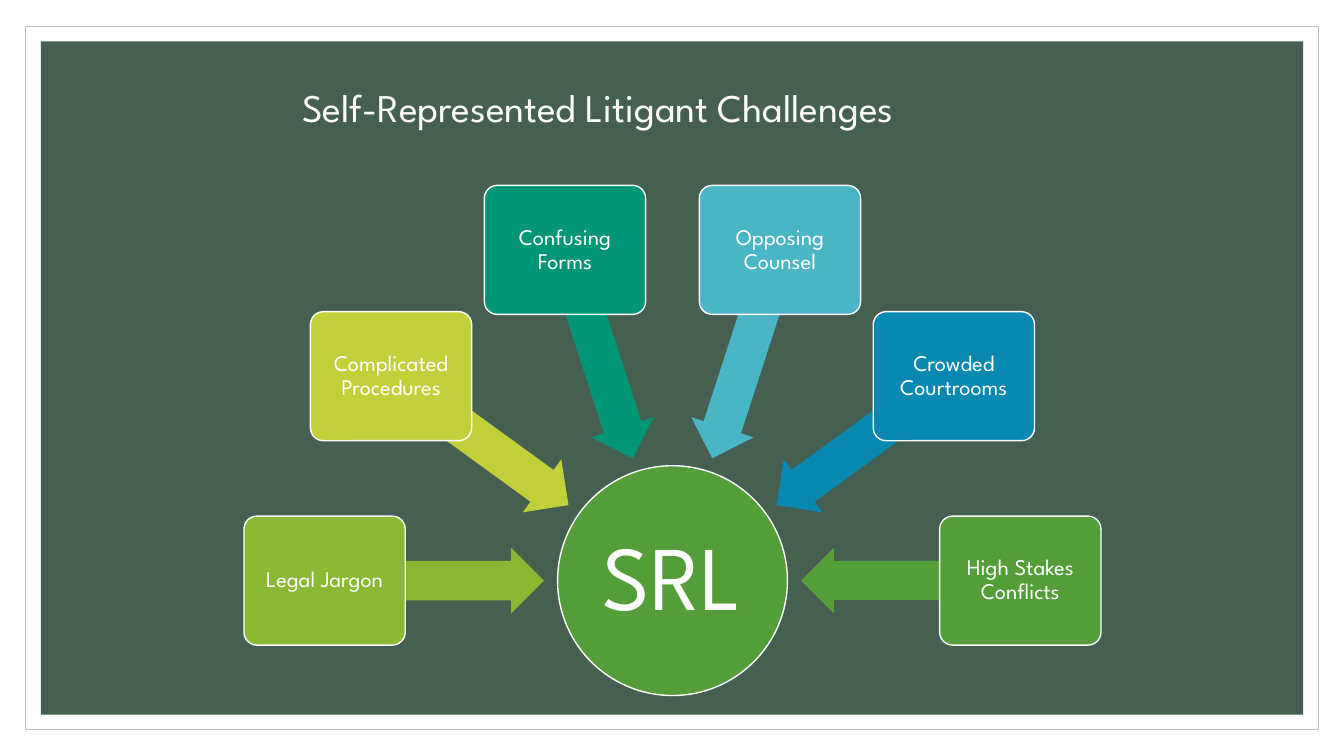
"""Build the slide on the challenges of self-represented litigants."""
from math import cos, radians, sin
from pptx import Presentation
from pptx.dml.color import RGBColor
from pptx.enum.shapes import MSO_SHAPE
from pptx.enum.text import MSO_ANCHOR, MSO_AUTO_SIZE, PP_ALIGN
from pptx.util import Inches, Pt

TITLE = "Self-Represented Litigant Challenges"
HUB = "SRL"
ITEMS = [
    ("Legal Jargon", "lime"),
    ("Complicated Procedures", "yellow"),
    ("Confusing Forms", "teal"),
    ("Opposing Counsel", "aqua"),
    ("Crowded Courtrooms", "blue"),
    ("High Stakes Conflicts", "green"),
]
COLORS = {
    "white": "FFFFFF", "gray": "BFBFBF", "panel": "455F51",
    "lime": "8AB833", "yellow": "C0CF3A", "teal": "029676",
    "aqua": "4AB5C4", "blue": "0989B1", "green": "549E39",
}
FONT = "League Spartan"
WIDTH, HEIGHT = 13.33, 7.5
MID_X, MID_Y = 6.67, 5.76
HUB_SIZE = 2.28
BOX_W, BOX_H, BOX_REACH = 1.6, 1.28, 3.45
ARROW_W, ARROW_H, ARROW_REACH = 2.19, 0.65, 2.37


def color(name):
    return RGBColor.from_string(COLORS[name])


def add_shape(slide, kind, x, y, w, h, fill, line=None, weight=1):
    """Add a filled shape centred on x, y."""
    shape = slide.shapes.add_shape(
        kind, Inches(x - w / 2), Inches(y - h / 2), Inches(w), Inches(h))
    shape.shadow.inherit = False
    shape.fill.solid()
    shape.fill.fore_color.rgb = color(fill)
    if line:
        shape.line.color.rgb = color(line)
        shape.line.width = Pt(weight)
    else:
        shape.line.fill.background()
    return shape


def set_text(shape, text, size, align, inset):
    frame = shape.text_frame
    frame.text = text
    frame.word_wrap = True
    frame.auto_size = MSO_AUTO_SIZE.NONE
    frame.vertical_anchor = MSO_ANCHOR.MIDDLE
    frame.margin_left = frame.margin_right = Inches(inset)
    frame.margin_top = frame.margin_bottom = Inches(min(inset, 0.05))
    para = frame.paragraphs[0]
    para.alignment = align
    para.line_spacing = 0.9
    font = para.runs[0].font
    font.name, font.size = FONT, Pt(size)
    font.color.rgb = color("white")


def main():
    deck = Presentation()
    deck.slide_width, deck.slide_height = Inches(WIDTH), Inches(HEIGHT)
    slide = deck.slides.add_slide(deck.slide_layouts[5])

    rect = MSO_SHAPE.RECTANGLE
    add_shape(slide, rect, WIDTH / 2, HEIGHT / 2, 12.82, 6.98, "white", "gray", 0.5)
    add_shape(slide, rect, WIDTH / 2, HEIGHT / 2, 12.52, 6.68, "panel")

    title = slide.shapes.title
    title.left, title.top = Inches(2.9), Inches(0.46)
    title.width, title.height = Inches(8.26), Inches(1.26)
    set_text(title, TITLE, 28, PP_ALIGN.LEFT, 0.1)
    slide.shapes.element.append(title.element)

    hub = add_shape(slide, MSO_SHAPE.OVAL, MID_X, MID_Y, HUB_SIZE, HUB_SIZE,
                    "green", "white")
    set_text(hub, HUB, 65, PP_ALIGN.CENTER, 0.05)

    step = 180 / (len(ITEMS) - 1)
    for i, (label, fill) in enumerate(ITEMS):
        turn = 180 + i * step
        dx, dy = cos(radians(turn)), sin(radians(turn))
        arrow = add_shape(slide, MSO_SHAPE.LEFT_ARROW, MID_X + ARROW_REACH * dx,
                          MID_Y + ARROW_REACH * dy, ARROW_W, ARROW_H, fill)
        arrow.adjustments[0], arrow.adjustments[1] = 0.6, 0.5
        arrow.rotation = turn % 360
        box = add_shape(slide, MSO_SHAPE.ROUNDED_RECTANGLE, MID_X + BOX_REACH * dx,
                        MID_Y + BOX_REACH * dy, BOX_W, BOX_H, fill, "white")
        box.adjustments[0] = 0.1
        set_text(box, label, 16, PP_ALIGN.CENTER, 0.03)

    deck.save("out.pptx")


if __name__ == "__main__":
    main()
